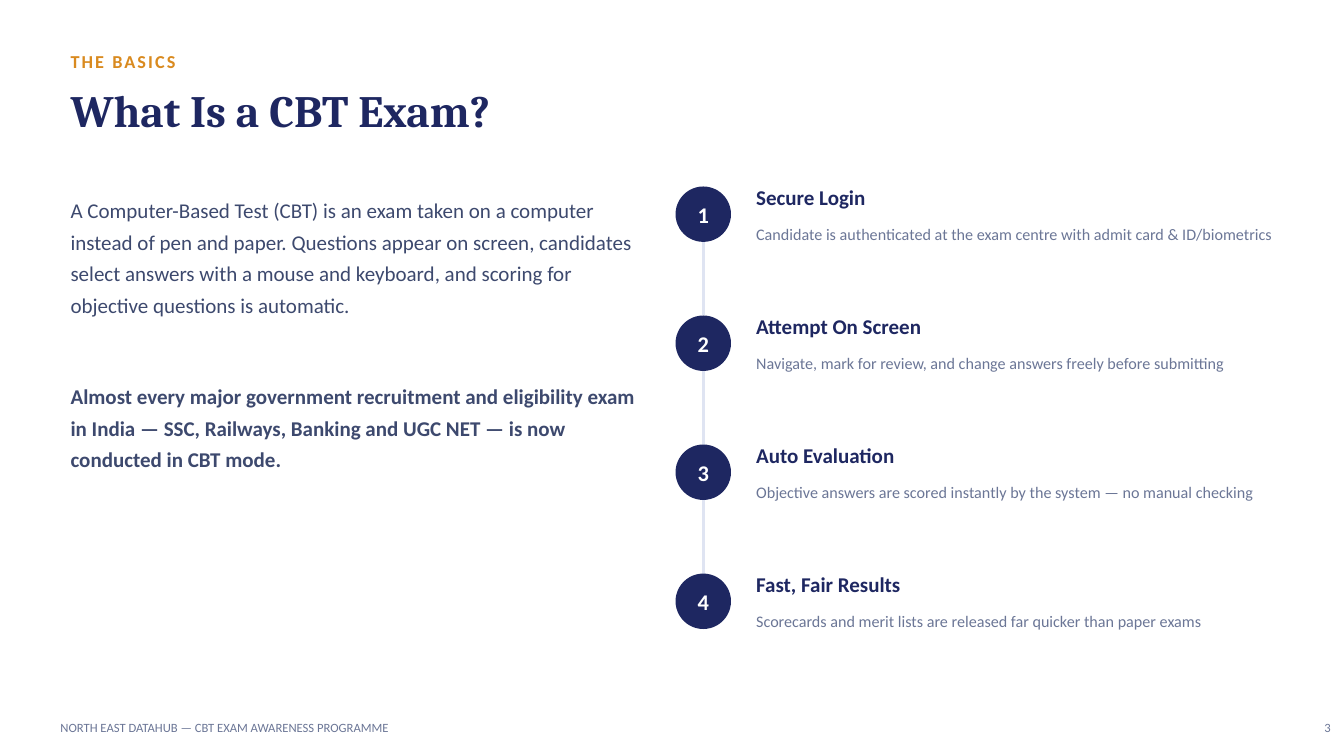
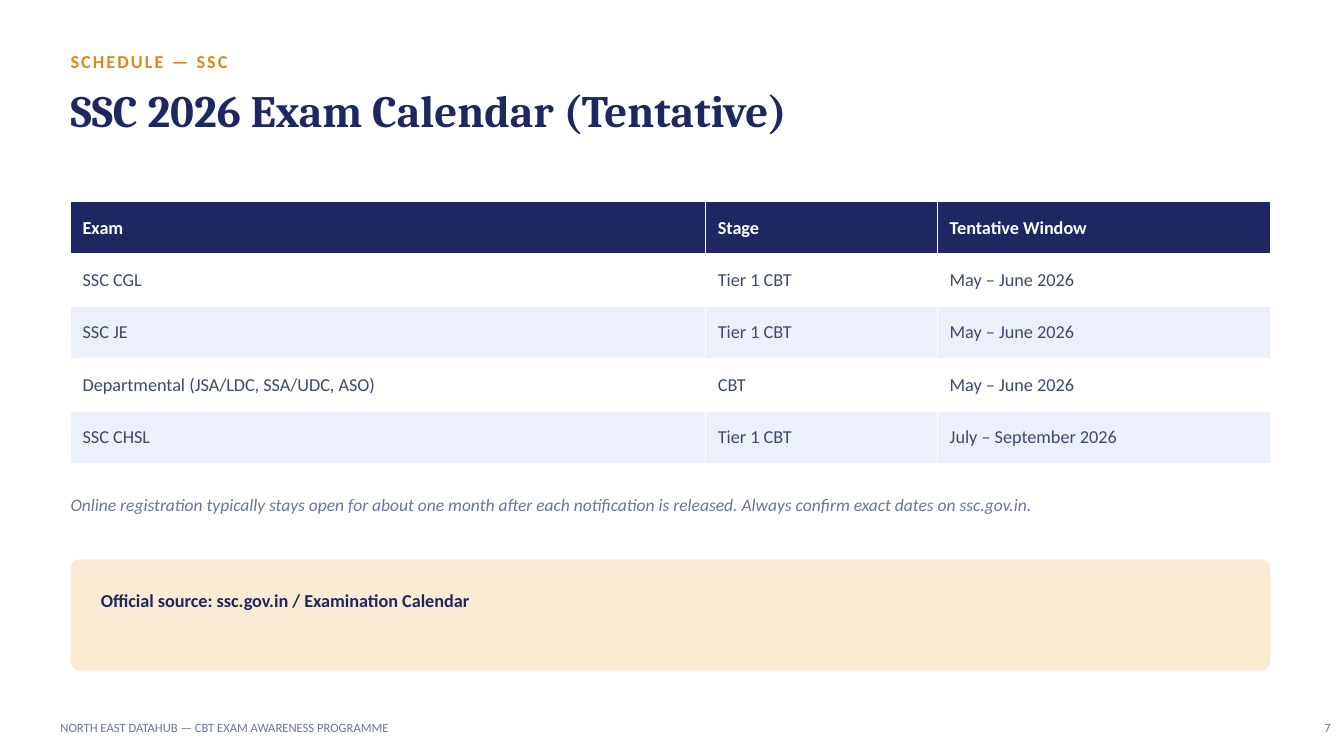
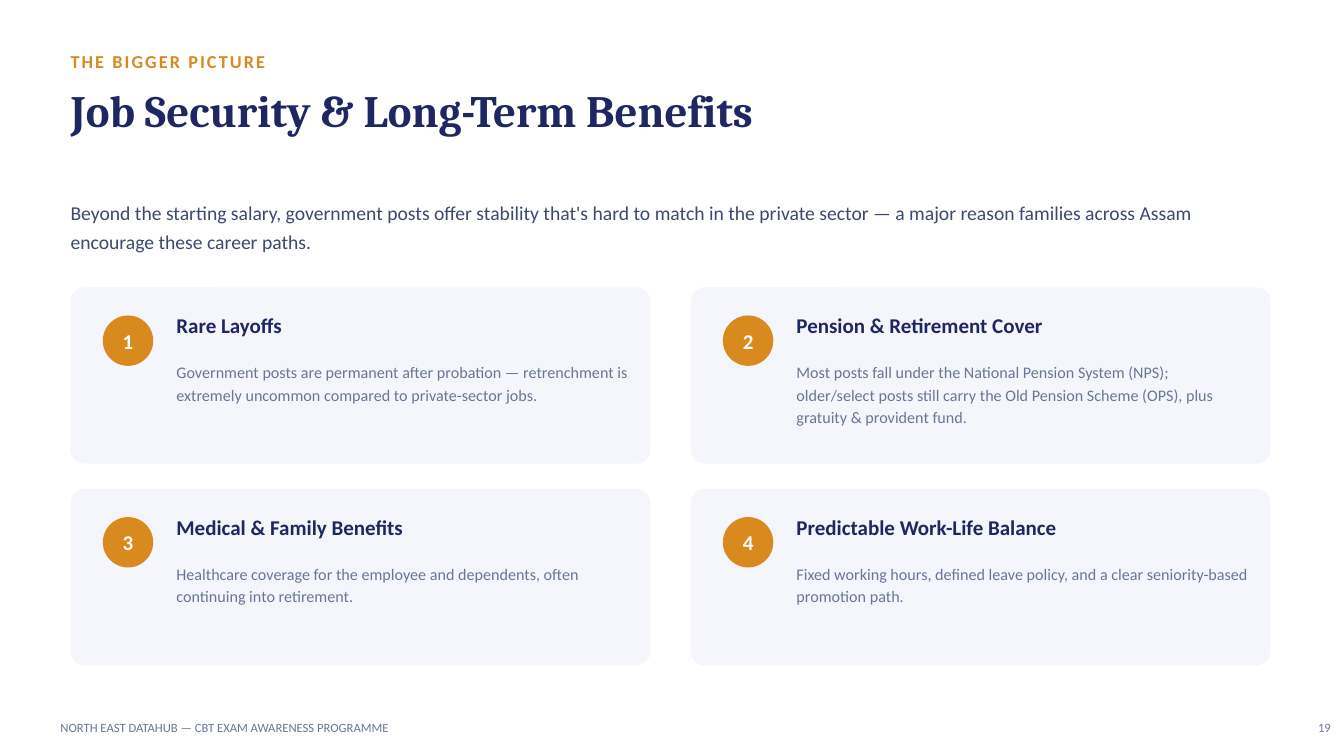
import pptx
import pptx.dml.color
import pptx.enum.shapes
import pptx.enum.text
import pptx.oxml.ns
import pptx.util
from lxml import etree

Inches = pptx.util.Inches
Color = pptx.dml.color.RGBColor
Shape = pptx.enum.shapes.MSO_SHAPE
Align = pptx.enum.text.PP_ALIGN
Anchor = pptx.enum.text.MSO_ANCHOR

NAVY = Color(0x1E, 0x27, 0x61)
AMBER = Color(0xD9, 0x8A, 0x1F)
SLATE = Color(0x3D, 0x49, 0x6E)
MUTED = Color(0x6B, 0x76, 0x96)
RAIL = Color(0xDF, 0xE4, 0xF2)
BAND = Color(0xEC, 0xF0, 0xFA)
CARD = Color(0xF4, 0xF6, 0xFB)
CREAM = Color(0xFB, 0xEB, 0xD2)
WHITE = Color(0xFF, 0xFF, 0xFF)

LEFT = 0.7
WIDTH = 11.9
TITLE_ONLY = 5
TITLE_AND_BODY = 1
FOOTER = "NORTH EAST DATAHUB — CBT EXAM AWARENESS PROGRAMME"

BASICS = [
    "A Computer-Based Test (CBT) is an exam taken on a computer instead of pen and paper. Questions appear on screen, candidates select answers with a mouse and keyboard, and scoring for objective questions is automatic.",
    "Almost every major government recruitment and eligibility exam in India — SSC, Railways, Banking and UGC NET — is now conducted in CBT mode.",
]
STEPS = [
    ("Secure Login", "Candidate is authenticated at the exam centre with admit card & ID/biometrics"),
    ("Attempt On Screen", "Navigate, mark for review, and change answers freely before submitting"),
    ("Auto Evaluation", "Objective answers are scored instantly by the system — no manual checking"),
    ("Fast, Fair Results", "Scorecards and merit lists are released far quicker than paper exams"),
]
CALENDAR = [
    ("Exam", "Stage", "Tentative Window"),
    ("SSC CGL", "Tier 1 CBT", "May – June 2026"),
    ("SSC JE", "Tier 1 CBT", "May – June 2026"),
    ("Departmental (JSA/LDC, SSA/UDC, ASO)", "CBT", "May – June 2026"),
    ("SSC CHSL", "Tier 1 CBT", "July – September 2026"),
]
COLUMN_WIDTHS = [6.3, 2.3, 3.3]
ROW_HEIGHT = 0.52
REGISTRATION_NOTE = "Online registration typically stays open for about one month after each notification is released. Always confirm exact dates on ssc.gov.in."
OFFICIAL_SOURCE = "Official source: ssc.gov.in / Examination Calendar"
BENEFITS_INTRO = "Beyond the starting salary, government posts offer stability that's hard to match in the private sector — a major reason families across Assam encourage these career paths."
BENEFITS = [
    ("Rare Layoffs", "Government posts are permanent after probation — retrenchment is extremely uncommon compared to private-sector jobs."),
    ("Pension & Retirement Cover", "Most posts fall under the National Pension System (NPS); older/select posts still carry the Old Pension Scheme (OPS), plus gratuity & provident fund."),
    ("Medical & Family Benefits", "Healthcare coverage for the employee and dependents, often continuing into retirement."),
    ("Predictable Work-Life Balance", "Fixed working hours, defined leave policy, and a clear seniority-based promotion path."),
]


def write(para, text, size=15, color=MUTED, bold=False, italic=False, font="Calibri",
          align=Align.LEFT, leading=1.0, before=0, tracking=0):
    para.alignment = align
    para.line_spacing = leading
    para.space_before = pptx.util.Pt(before)
    span = para.add_run()
    span.text = text
    span.font.name = font
    span.font.size = pptx.util.Pt(size)
    span.font.bold = bold
    span.font.italic = italic
    span.font.color.rgb = color
    if tracking:
        span.font._element.set("spc", str(int(tracking * 100)))


def set_frame(shape, anchor=Anchor.TOP):
    frame = shape.text_frame
    frame.word_wrap = True
    frame.auto_size = pptx.enum.text.MSO_AUTO_SIZE.NONE
    frame.vertical_anchor = anchor
    frame.margin_left = frame.margin_top = frame.margin_right = frame.margin_bottom = 0
    return frame


def place(shape, left, top, width, height):
    shape.left, shape.top = Inches(left), Inches(top)
    shape.width, shape.height = Inches(width), Inches(height)


def add_text(page, text, left, top, width, height, **style):
    box = page.shapes.add_textbox(Inches(left), Inches(top), Inches(width), Inches(height))
    write(set_frame(box).paragraphs[0], text, **style)


def add_shape(page, preset, left, top, width, height, fill):
    shape = page.shapes.add_shape(preset, Inches(left), Inches(top), Inches(width), Inches(height))
    shape.shadow.inherit = False
    shape.fill.solid()
    shape.fill.fore_color.rgb = fill
    shape.line.fill.background()
    return shape


def add_panel(page, left, top, width, height, fill):
    add_shape(page, Shape.ROUNDED_RECTANGLE, left, top, width, height, fill).adjustments[0] = 0.08


def add_badge(page, number, left, top, side, fill, size):
    badge = add_shape(page, Shape.OVAL, left, top, side, side, fill)
    write(set_frame(badge, Anchor.MIDDLE).paragraphs[0], str(number), size=size,
          color=WHITE, bold=True, align=Align.CENTER)


def add_rail(page, x, top, bottom):
    rail = page.shapes.add_connector(pptx.enum.shapes.MSO_CONNECTOR.STRAIGHT,
                                     Inches(x), Inches(top), Inches(x), Inches(bottom))
    rail.line.color.rgb = RAIL
    rail.line.width = Inches(0.03)
    etree.SubElement(rail._element.spPr, pptx.oxml.ns.qn("a:effectLst"))


def fill_body(page, top, width, height, entries):
    body = page.placeholders[1]
    place(body, LEFT, top, width, height)
    frame = set_frame(body)
    for index, (text, style) in enumerate(entries):
        para = frame.paragraphs[0] if index == 0 else frame.add_paragraph()
        properties = para._p.get_or_add_pPr()
        properties.set("marL", "0")
        properties.set("indent", "0")
        etree.SubElement(properties, pptx.oxml.ns.qn("a:buNone"))
        write(para, text, color=SLATE, **style)


def start_page(deck, layout, kicker, title, number):
    page = deck.slides.add_slide(deck.slide_layouts[layout])
    add_text(page, kicker, LEFT, 0.5, 10, 0.3, size=13, color=AMBER, bold=True, tracking=1.5)
    place(page.shapes.title, LEFT, 0.82, WIDTH, 0.9)
    write(set_frame(page.shapes.title).paragraphs[0], title, size=32, color=NAVY,
          bold=True, font="Cambria")
    add_text(page, FOOTER, 0.6, 7.14, 8, 0.3, size=9)
    add_text(page, str(number), 12.8, 7.14, 0.4, 0.3, size=9, align=Align.RIGHT)
    return page


def build_basics(deck):
    page = start_page(deck, TITLE_AND_BODY, "THE BASICS", "What Is a CBT Exam?", 3)
    definition, adoption = BASICS
    fill_body(page, 1.9, 5.65, 2.8, [
        (definition, {"leading": 1.25}),
        (adoption, {"leading": 1.25, "bold": True, "before": 43}),
    ])
    left, first_top, side, pitch = 6.7, 1.85, 0.55, 1.28
    for index, (heading, detail) in enumerate(STEPS):
        top = first_top + index * pitch
        add_badge(page, index + 1, left, top, side, NAVY, 16)
        if index < len(STEPS) - 1:
            add_rail(page, left + side / 2, top + side, top + pitch)
        add_text(page, heading, 7.5, top - 0.02, 5.2, 0.3, color=NAVY, bold=True)
        add_text(page, detail, 7.5, top + 0.36, 5.2, 0.4, size=11.5, leading=1.1)


def build_calendar(deck):
    page = start_page(deck, TITLE_ONLY, "SCHEDULE — SSC", "SSC 2026 Exam Calendar (Tentative)", 7)
    table = page.shapes.add_table(len(CALENDAR), len(COLUMN_WIDTHS), Inches(LEFT), Inches(2),
                                  Inches(WIDTH), Inches(ROW_HEIGHT * len(CALENDAR))).table
    table.horz_banding = False
    for column, width in zip(table.columns, COLUMN_WIDTHS):
        column.width = Inches(width)
    for row, values in enumerate(CALENDAR):
        header = row == 0
        for column, value in enumerate(values):
            cell = table.cell(row, column)
            cell.fill.solid()
            cell.fill.fore_color.rgb = NAVY if header else WHITE if row % 2 else BAND
            cell.vertical_anchor = Anchor.MIDDLE
            cell.margin_left = cell.margin_right = Inches(0.12)
            cell.margin_top = cell.margin_bottom = Inches(0.06)
            write(cell.text_frame.paragraphs[0], value, size=13,
                  color=WHITE if header else SLATE, bold=header)
    add_text(page, REGISTRATION_NOTE, LEFT, 4.9, 11.5, 0.6, size=12.5, italic=True)
    add_panel(page, LEFT, 5.55, WIDTH, 1.1, CREAM)
    add_text(page, OFFICIAL_SOURCE, 1, 5.85, 11, 0.5, size=13, color=NAVY, bold=True)


def build_benefits(deck):
    page = start_page(deck, TITLE_AND_BODY, "THE BIGGER PICTURE", "Job Security & Long-Term Benefits", 19)
    fill_body(page, 1.95, 11.5, 0.7, [(BENEFITS_INTRO, {"size": 14, "leading": 1.2})])
    width, height, gap_x, gap_y = 5.75, 1.75, 0.4, 0.25
    for index, (heading, detail) in enumerate(BENEFITS):
        row, column = divmod(index, 2)
        left = LEFT + column * (width + gap_x)
        top = 2.85 + row * (height + gap_y)
        add_panel(page, left, top, width, height, CARD)
        add_badge(page, index + 1, left + 0.32, top + 0.28, 0.5, AMBER, 15)
        add_text(page, heading, left + 1.05, top + 0.25, 4.5, 0.45, color=NAVY, bold=True)
        add_text(page, detail, left + 1.05, top + 0.72, 4.5, 0.95, size=11.5, leading=1.15)


def main():
    deck = pptx.Presentation()
    deck.slide_width, deck.slide_height = Inches(13.33), Inches(7.5)
    build_basics(deck)
    build_calendar(deck)
    build_benefits(deck)
    deck.save("out.pptx")


if __name__ == "__main__":
    main()
